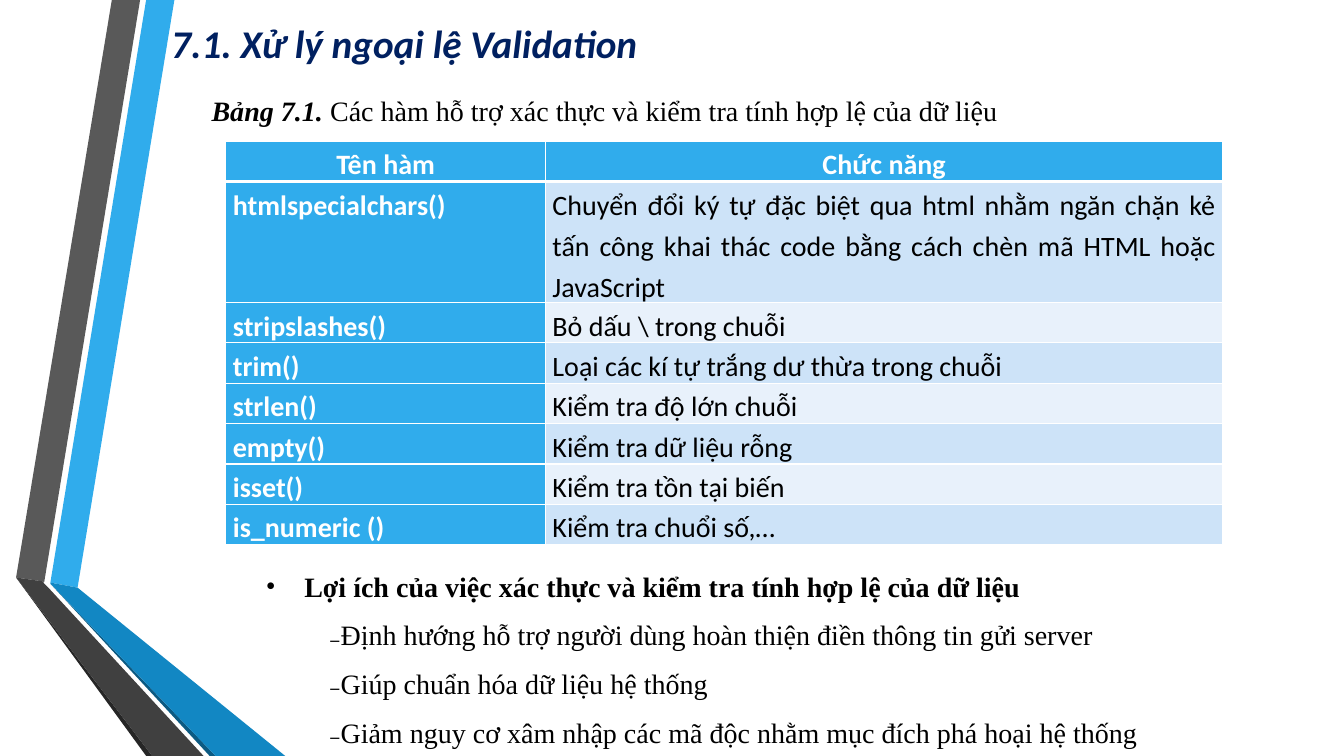
from lxml.etree import SubElement
from pptx import Presentation
from pptx.dml.color import RGBColor
from pptx.enum.text import MSO_ANCHOR as Anchor, PP_ALIGN as Align
from pptx.oxml.ns import qn
from pptx.util import Inches, Pt

COLORS = {
    "white": "FFFFFF", "black": "000000", "navy": "002060",
    "sky": "30ACEC", "blue": "1287C3", "deep_blue": "0C5A82",
    "gray": "595959", "dark_gray": "404040", "near_black": "262626",
    "band_dark": "CDE3F8", "band_light": "E8F1FB",
}

RIBBONS = [
    ("sky", [(0.5, 5.78), (0.77, 5.83), (1.73, 0), (1.45, 0)]),
    ("gray", [(1.39, 0), (1.11, 0), (0.16, 5.73), (0.44, 5.77)]),
    ("near_black", [(0.16, 5.73), (1.45, 7.5), (1.51, 7.5)]),
    ("deep_blue", [(0.5, 5.79), (2.08, 7.5), (2.14, 7.5)]),
    ("blue", [(0.5, 5.79), (2.14, 7.5), (2.83, 7.5), (0.77, 5.83), (0.5, 5.78)]),
    ("dark_gray", [(2.02, 7.5), (0.48, 5.83), (0.43, 5.78), (0.44, 5.77),
                   (0.16, 5.73), (1.51, 7.5)]),
]

HEADINGS = ["Tên hàm", "Chức năng"]
FUNCTIONS = [
    ("htmlspecialchars()", "Chuyển đổi ký tự đặc biệt qua html nhằm ngăn chặn kẻ "
     "tấn công khai thác code bằng cách chèn mã HTML hoặc JavaScript"),
    ("stripslashes()", "Bỏ dấu \\ trong chuỗi"),
    ("trim()", "Loại các kí tự trắng dư thừa trong chuỗi"),
    ("strlen()", "Kiểm tra độ lớn chuỗi"),
    ("empty()", "Kiểm tra dữ liệu rỗng"),
    ("isset()", "Kiểm tra tồn tại biến"),
    ("is_numeric ()", "Kiểm tra chuổi số,…"),
]

BENEFITS_HEADING = "Lợi ích của việc xác thực và kiểm tra tính hợp lệ của dữ liệu"
BENEFITS = [
    "Định hướng hỗ trợ người dùng hoàn thiện điền thông tin gửi server",
    "Giúp chuẩn hóa dữ liệu hệ thống",
    "Giảm nguy cơ xâm nhập các mã độc nhằm mục đích phá hoại hệ thống",
]


def rgb(color):
    return RGBColor.from_string(COLORS[color])


class SlideBuilder:
    sans = "Calibri"
    serif = "Times New Roman"
    text_size = 20

    def __init__(self, slide):
        self.slide = slide

    def ribbon(self, color, points):
        corners = [(Inches(x), Inches(y)) for x, y in points]
        outline = self.slide.shapes.build_freeform(*corners[0])
        outline.add_line_segments(corners[1:], close=True)
        band = outline.convert_to_shape()
        band.shadow.inherit = False
        band.fill.solid()
        band.fill.fore_color.rgb = rgb(color)
        band.line.fill.background()

    def text_frame(self, left, top, width, height, anchor=Anchor.TOP):
        frame = self.slide.shapes.add_textbox(
            Inches(left), Inches(top), Inches(width), Inches(height)).text_frame
        frame.word_wrap = True
        frame.vertical_anchor = anchor
        return frame

    def run(self, paragraph, text, font, color="black", size=text_size,
            bold=False, italic=False):
        run = paragraph.add_run()
        run.text = text
        run.font.name = font
        run.font.size = Pt(size)
        run.font.bold = bold
        run.font.italic = italic
        run.font.color.rgb = rgb(color)

    def bullet(self, paragraph, mark, margin, indent):
        props = paragraph._p.get_or_add_pPr()
        props.set("marL", str(Inches(margin)))
        props.set("indent", str(Inches(indent)))
        SubElement(props, qn("a:buFont"), typeface=self.serif)
        SubElement(props, qn("a:buChar"), char=mark)
        paragraph.alignment = Align.JUSTIFY
        paragraph.line_spacing = 1.2

    def borders(self, cell, bottom):
        """Draw white cell edges; bottom is the lower edge's width in points."""
        props = cell._tc.get_or_add_tcPr()
        for side, width in (("L", 1), ("R", 1), ("T", 1), ("B", bottom)):
            edge = SubElement(props, qn(f"a:ln{side}"), w=str(Pt(width)))
            fill = SubElement(edge, qn("a:solidFill"))
            SubElement(fill, qn("a:srgbClr"), val=COLORS["white"])

    def cell(self, cell, text, fill, heading=False, strong=False):
        self.borders(cell, 3 if heading else 1)
        cell.fill.solid()
        cell.fill.fore_color.rgb = rgb(fill)
        cell.margin_left = cell.margin_right = Inches(0.07)
        cell.margin_top = cell.margin_bottom = 0
        paragraph = cell.text_frame.paragraphs[0]
        paragraph.alignment = Align.CENTER if heading else Align.JUSTIFY
        paragraph.line_spacing = 1.2
        self.run(paragraph, text, self.sans, "white" if strong else "black",
                 bold=strong)

    def table(self, left, top, widths, heights, headings, rows):
        table = self.slide.shapes.add_table(
            len(heights), len(widths), Inches(left), Inches(top),
            Inches(sum(widths)), Inches(sum(heights))).table
        for column, width in zip(table.columns, widths):
            column.width = Inches(width)
        for row, height in zip(table.rows, heights):
            row.height = Inches(height)
        for col, heading in enumerate(headings):
            self.cell(table.cell(0, col), heading, "sky", heading=True, strong=True)
        for index, (function, purpose) in enumerate(rows, start=1):
            band = "band_dark" if index % 2 else "band_light"
            self.cell(table.cell(index, 0), function, "sky", strong=True)
            self.cell(table.cell(index, 1), purpose, band)


def main():
    deck = Presentation()
    deck.slide_width, deck.slide_height = Inches(13.33), Inches(7.5)
    builder = SlideBuilder(deck.slides.add_slide(deck.slide_layouts[6]))

    for color, points in RIBBONS:
        builder.ribbon(color, points)

    title = builder.text_frame(1.6, -0.23, 11.59, 1.07, Anchor.MIDDLE).paragraphs[0]
    title.line_spacing = 1.5
    builder.run(title, "7.1. Xử lý ngoại lệ Validation", builder.sans, "navy",
                size=28, bold=True, italic=True)

    caption = builder.text_frame(2, 0.88, 10.34, 0.44).paragraphs[0]
    builder.run(caption, "Bảng 7.1. ", builder.serif, bold=True, italic=True)
    builder.run(caption, "Các hàm hỗ trợ xác thực và kiểm tra tính hợp lệ của dữ liệu",
                builder.serif)

    builder.table(2.24, 1.4, [3.17, 6.72], [0.4, 1.2] + [0.4] * 6,
                  HEADINGS, FUNCTIONS)

    benefits = builder.text_frame(2.54, 5.53, 9.7, 1.97)
    heading = benefits.paragraphs[0]
    builder.bullet(heading, "•", 0.38, -0.38)
    builder.run(heading, BENEFITS_HEADING, builder.serif, bold=True)
    for benefit in BENEFITS:
        item = benefits.add_paragraph()
        builder.bullet(item, "₋", 0.32, 0.31)
        item.space_before = Pt(6)
        builder.run(item, benefit, builder.serif)

    deck.save("out.pptx")


if __name__ == "__main__":
    main()
